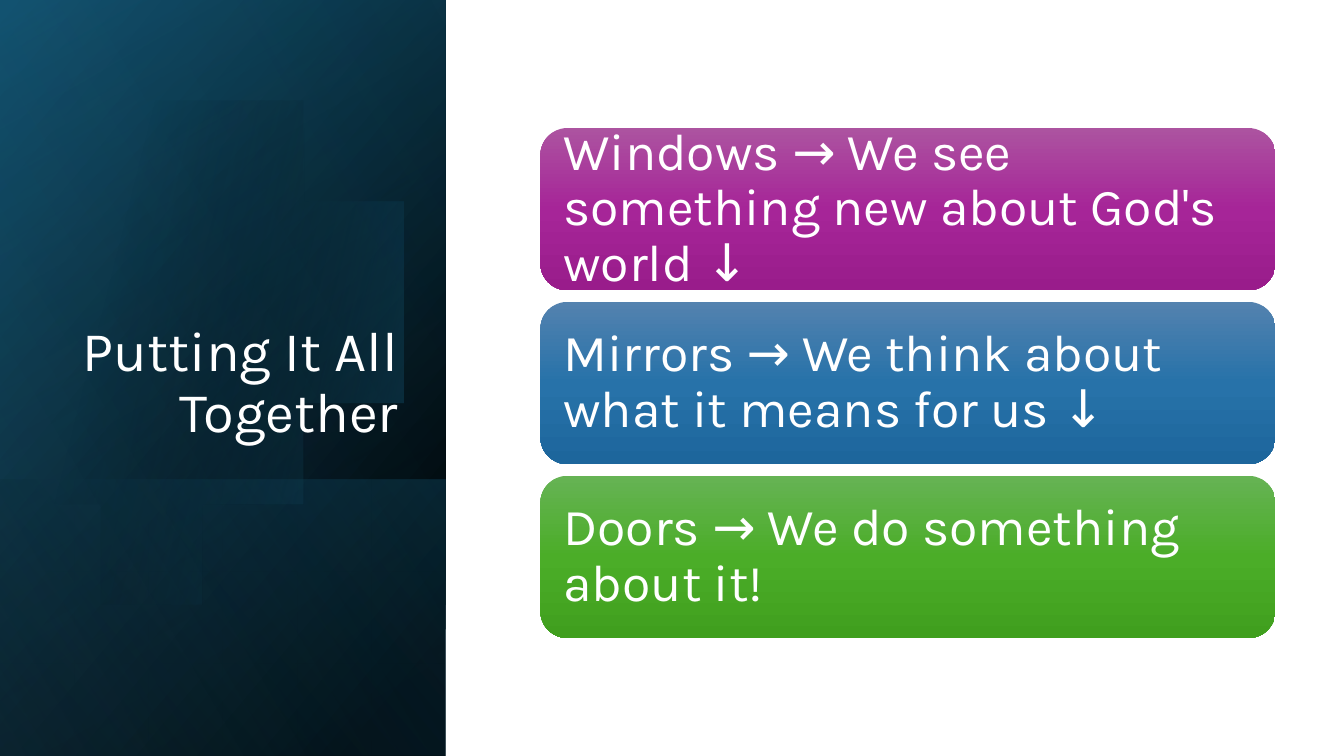
import math
from dataclasses import dataclass

import pptx
import pptx.dml.color
import pptx.enum.shapes
import pptx.enum.text
import pptx.oxml.ns
import pptx.util
from lxml import etree
from pptx.util import Inches


@dataclass(frozen=True)
class Theme:
    font: str = "Karla"
    text: str = "FFFFFF"
    title_size: int = 40
    card_size: int = 37
    dark: str = "000000"
    deep: str = "104862"
    teal: str = "156082"
    sky: str = "46B1E1"


@dataclass(frozen=True)
class Stop:
    position: int
    color: str
    alpha: int = 100


@dataclass(frozen=True)
class Gradient:
    angle: int  # degrees clockwise
    stops: tuple[Stop, ...]


@dataclass(frozen=True)
class Layer:
    top: float
    height: float
    gradient: Gradient


@dataclass(frozen=True)
class Card:
    text: str
    colors: tuple[str, str, str]


THEME = Theme()
PANEL_WIDTH, SLIDE_HEIGHT = 4.42, 7.5
CARD_LEFT, CARD_TOP, CARD_WIDTH, CARD_HEIGHT = 5.36, 1.27, 7.29, 1.61
CARD_PITCH = 3.45 / 2
CIRCLE_X, CIRCLE_Y, CIRCLE_RADIUS = 1.45, 3.37, 2.27

LAYERS_BELOW = [
    Layer(0, SLIDE_HEIGHT, Gradient(50, (Stop(8, THEME.dark), Stop(100, THEME.deep)))),
    Layer(0, SLIDE_HEIGHT, Gradient(30, (Stop(0, THEME.dark, 0), Stop(99, THEME.teal, 46)))),
    Layer(4.76, 2.74, Gradient(130, (Stop(2, THEME.teal, 29), Stop(100, THEME.dark, 30)))),
]
CIRCLE_GLOW = Gradient(14, (Stop(29, THEME.dark, 0), Stop(100, THEME.teal, 43)))
LAYER_ABOVE = Layer(
    0, SLIDE_HEIGHT, Gradient(120, (Stop(0, THEME.dark, 0), Stop(99, THEME.sky, 11))))

CARDS = [
    Card("Windows → We see something new about God's world ↓", ("AC53A0", "A62598", "991C8B")),
    Card("Mirrors → We think about what it means for us ↓", ("5382AF", "2772A9", "1D669C")),
    Card("Doors → We do something about it!", ("66B354", "4BAD28", "409F1E")),
]


def paint(s, gradient: Gradient) -> None:
    """Fill a shape with a linear gradient, without line or shadow."""
    qn = pptx.oxml.ns.qn
    s.shadow.inherit = False
    s.line.fill.background()
    s.fill.gradient()
    s.fill.gradient_angle = (360 - gradient.angle) % 360
    stops = s.element.spPr.find(qn("a:gradFill")).find(qn("a:gsLst"))
    for old in list(stops):
        stops.remove(old)
    for stop in gradient.stops:
        gs = etree.SubElement(stops, qn("a:gs"), pos=str(stop.position * 1000))
        color = etree.SubElement(gs, qn("a:srgbClr"), val=stop.color)
        if stop.alpha < 100:
            etree.SubElement(color, qn("a:alpha"), val=str(stop.alpha * 1000))


def write(tf, text: str, size: int, align) -> None:
    tf.word_wrap = True
    tf.auto_size = pptx.enum.text.MSO_AUTO_SIZE.NONE
    p = tf.paragraphs[0]
    p.alignment = align
    p.line_spacing = 0.9
    r = p.add_run()
    r.text = text
    r.font.name = THEME.font
    r.font.size = pptx.util.Pt(size)
    r.font.color.rgb = pptx.dml.color.RGBColor.from_string(THEME.text)


def add_layer(slide, layer: Layer) -> None:
    """Add a panel layer, mirrored and turned a quarter so its gradient turns too."""
    left = (PANEL_WIDTH - layer.height) / 2
    top = layer.top + (layer.height - PANEL_WIDTH) / 2
    s = slide.shapes.add_shape(
        pptx.enum.shapes.MSO_SHAPE.RECTANGLE,
        Inches(left), Inches(top), Inches(layer.height), Inches(PANEL_WIDTH))
    s.rotation = 90
    s.element.spPr.xfrm.set("flipH", "1")
    paint(s, layer.gradient)


def add_circle(slide) -> None:
    """Add the glowing circle, cut off along its left side."""
    points = [
        (CIRCLE_X + CIRCLE_RADIUS * math.cos(math.radians(a)),
         CIRCLE_Y + CIRCLE_RADIUS * math.sin(math.radians(a)))
        for a in range(-135, 136, 3)
    ]
    builder = slide.shapes.build_freeform(*points[0], scale=Inches(1))
    builder.add_line_segments(points[1:], close=True)
    paint(builder.convert_to_shape(), CIRCLE_GLOW)


def add_title(slide, text: str) -> None:
    title = slide.shapes.title
    title.element.getparent().append(title.element)  # in front of the panel
    title.left, title.top = Inches(0.64), Inches(1.84)
    title.width, title.height = Inches(3.41), Inches(2.62)
    title.text_frame.vertical_anchor = pptx.enum.text.MSO_ANCHOR.BOTTOM
    write(title.text_frame, text, THEME.title_size, pptx.enum.text.PP_ALIGN.RIGHT)


def add_card(slide, card: Card, index: int) -> None:
    s = slide.shapes.add_shape(
        pptx.enum.shapes.MSO_SHAPE.ROUNDED_RECTANGLE,
        Inches(CARD_LEFT), Inches(CARD_TOP + index * CARD_PITCH),
        Inches(CARD_WIDTH), Inches(CARD_HEIGHT))
    paint(s, Gradient(90, tuple(map(Stop, (0, 50, 100), card.colors))))
    tf = s.text_frame
    tf.margin_left = tf.margin_right = tf.margin_top = tf.margin_bottom = Inches(0.15)
    tf.vertical_anchor = pptx.enum.text.MSO_ANCHOR.MIDDLE
    write(tf, card.text, THEME.card_size, pptx.enum.text.PP_ALIGN.LEFT)


def main() -> None:
    prs = pptx.Presentation()
    prs.slide_width, prs.slide_height = Inches(13.33), Inches(SLIDE_HEIGHT)
    slide = prs.slides.add_slide(prs.slide_layouts[5])

    # Dark panel
    for layer in LAYERS_BELOW:
        add_layer(slide, layer)
    add_circle(slide)
    add_layer(slide, LAYER_ABOVE)

    # Title and cards
    add_title(slide, "Putting It All Together")
    for index, card in enumerate(CARDS):
        add_card(slide, card, index)

    prs.save("out.pptx")


if __name__ == "__main__":
    main()
